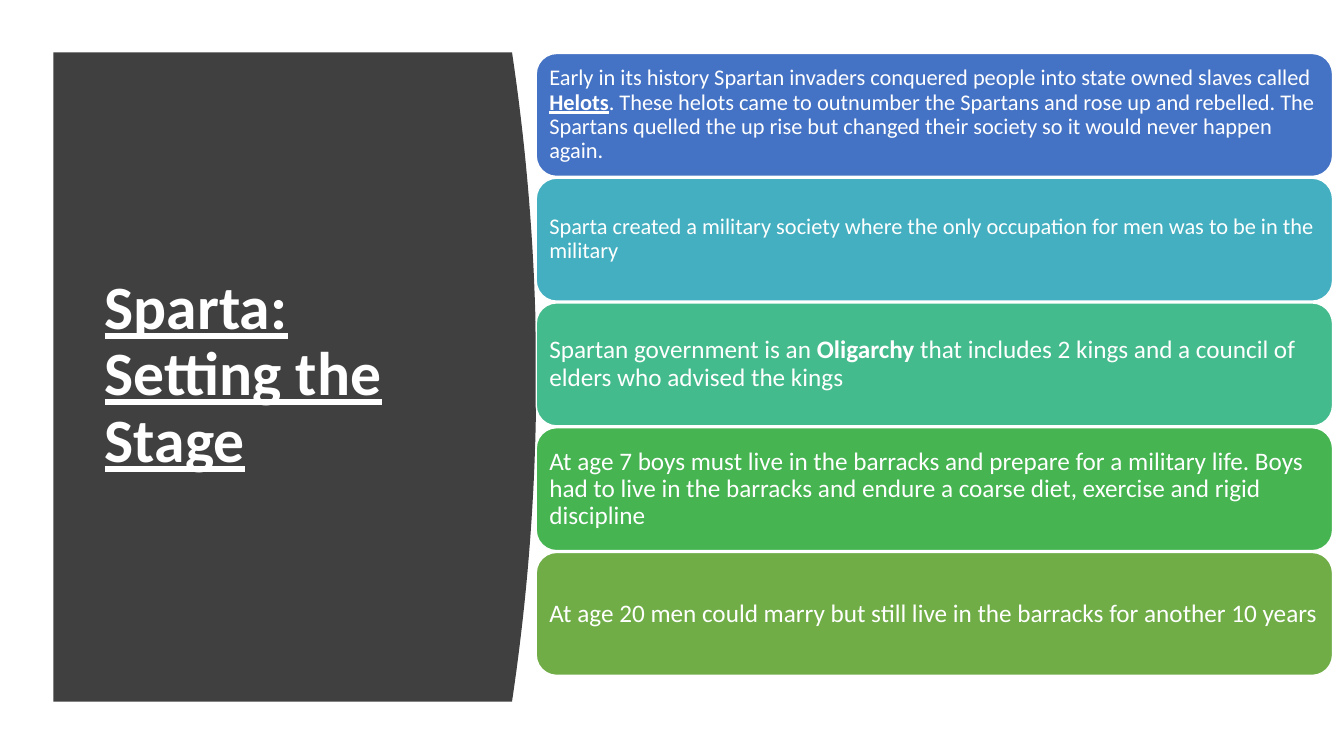
from pptx import Presentation
from pptx import util as u
from pptx.dml.color import RGBColor
from pptx.enum import shapes, text

SLIDE_WIDTH, SLIDE_HEIGHT = u.Inches(13.33), u.Inches(7.5)
WHITE = RGBColor(0xFF, 0xFF, 0xFF)
CHARCOAL = RGBColor(0x40, 0x40, 0x40)
BLUE = RGBColor(0x44, 0x72, 0xC4)
TEAL = RGBColor(0x43, 0xAF, 0xC0)
MINT = RGBColor(0x43, 0xBB, 0x8D)
GREEN = RGBColor(0x45, 0xB4, 0x51)
OLIVE = RGBColor(0x70, 0xAD, 0x47)
FONT = "Calibri"

PANEL_LEFT, PANEL_TOP, PANEL_BOTTOM = 3.98, 6.93, 92.8
PANEL_CORNER, PANEL_BULGE, CURVE_STEPS = 38.1, 1.8, 40
CARD_LEFT, CARD_TOP, CARD_WIDTH, CARD_HEIGHT = 39.9, 7.07, 59.25, 16.27
CARD_PITCH = 16.5

PLAIN, BOLD, BOLD_UNDERLINED = (False, False), (True, False), (True, True)
FACTS = [
    (BLUE, 16, [
        ("Early in its history Spartan invaders conquered people into state "
         "owned slaves called ", PLAIN),
        ("Helots", BOLD_UNDERLINED),
        (". These helots came to outnumber the Spartans and rose up and "
         "rebelled. The Spartans quelled the up rise but changed their "
         "society so it would never happen again.", PLAIN)]),
    (TEAL, 16, [
        ("Sparta created a military society where the only occupation for "
         "men was to be in the military", PLAIN)]),
    (MINT, 18, [
        ("Spartan government is an ", PLAIN),
        ("Oligarchy", BOLD),
        (" that includes 2 kings and a council of elders who advised the "
         "kings", PLAIN)]),
    (GREEN, 18, [
        ("At age 7 boys must live in the barracks and prepare for a military "
         "life. Boys had to live in the barracks and endure a coarse diet, "
         "exercise and rigid discipline", PLAIN)]),
    (OLIVE, 18, [
        ("At age 20 men could marry but still live in the barracks for "
         "another 10 years", PLAIN)]),
]


def across(percent):
    """Return a percentage of the slide width."""
    return round(SLIDE_WIDTH * percent / 100)


def down(percent):
    """Return a percentage of the slide height."""
    return round(SLIDE_HEIGHT * percent / 100)


def style_run(run, size, emphasis):
    """Format a run in white with the given size, bold and underline."""
    run.font.name = FONT
    run.font.size = u.Pt(size)
    run.font.color.rgb = WHITE
    run.font.bold, run.font.underline = emphasis


def add_panel(slide):
    """Draw the dark panel with its bulging right edge behind the title."""
    edge = []
    for step in range(CURVE_STEPS + 1):
        share = step / CURVE_STEPS
        bulge = PANEL_BULGE * (1 - (2 * share - 1) ** 2)
        height = PANEL_TOP + share * (PANEL_BOTTOM - PANEL_TOP)
        edge.append((across(PANEL_CORNER + bulge), down(height)))
    outline = slide.shapes.build_freeform(across(PANEL_LEFT), down(PANEL_TOP))
    outline.add_line_segments(edge + [(across(PANEL_LEFT), down(PANEL_BOTTOM))])
    panel = outline.convert_to_shape()
    panel.shadow.inherit = False
    panel.fill.solid()
    panel.fill.fore_color.rgb = CHARCOAL
    panel.line.fill.background()
    slide.shapes.title._element.addprevious(panel._element)


def set_title(slide, wording):
    """Place and format the slide title on the panel."""
    title = slide.shapes.title
    title.left, title.top = across(7.05), down(14.8)
    title.width, title.height = across(28.05), down(69.87)
    frame = title.text_frame
    frame.text = wording
    frame.word_wrap = True
    frame.auto_size = text.MSO_AUTO_SIZE.NONE
    frame.vertical_anchor = text.MSO_ANCHOR.MIDDLE
    heading = frame.paragraphs[0]
    heading.alignment = text.PP_ALIGN.LEFT
    heading.line_spacing = 0.9
    style_run(heading.runs[0], 44, BOLD_UNDERLINED)


def add_fact(slide, row, color, size, pieces):
    """Add one rounded fact card in the given row of the stack."""
    card = slide.shapes.add_shape(
        shapes.MSO_SHAPE.ROUNDED_RECTANGLE,
        across(CARD_LEFT), down(CARD_TOP + row * CARD_PITCH),
        across(CARD_WIDTH), down(CARD_HEIGHT))
    card.shadow.inherit = False
    card.fill.solid()
    card.fill.fore_color.rgb = color
    card.line.color.rgb = WHITE
    card.line.width = u.Pt(1)
    frame = card.text_frame
    frame.word_wrap = True
    frame.vertical_anchor = text.MSO_ANCHOR.MIDDLE
    frame.margin_left = frame.margin_right = u.Inches(0.07)
    frame.margin_top = frame.margin_bottom = u.Inches(0.07)
    fact = frame.paragraphs[0]
    fact.alignment = text.PP_ALIGN.LEFT
    fact.line_spacing = 0.9
    for wording, emphasis in pieces:
        run = fact.add_run()
        run.text = wording
        style_run(run, size, emphasis)


def main():
    """Build the Sparta slide and save it."""
    deck = Presentation()
    deck.slide_width, deck.slide_height = SLIDE_WIDTH, SLIDE_HEIGHT
    slide = deck.slides.add_slide(deck.slide_layouts.get_by_name("Title Only"))
    add_panel(slide)
    set_title(slide, "Sparta: Setting the Stage")
    for row, (color, size, pieces) in enumerate(FACTS):
        add_fact(slide, row, color, size, pieces)
    deck.save("out.pptx")


if __name__ == "__main__":
    main()
